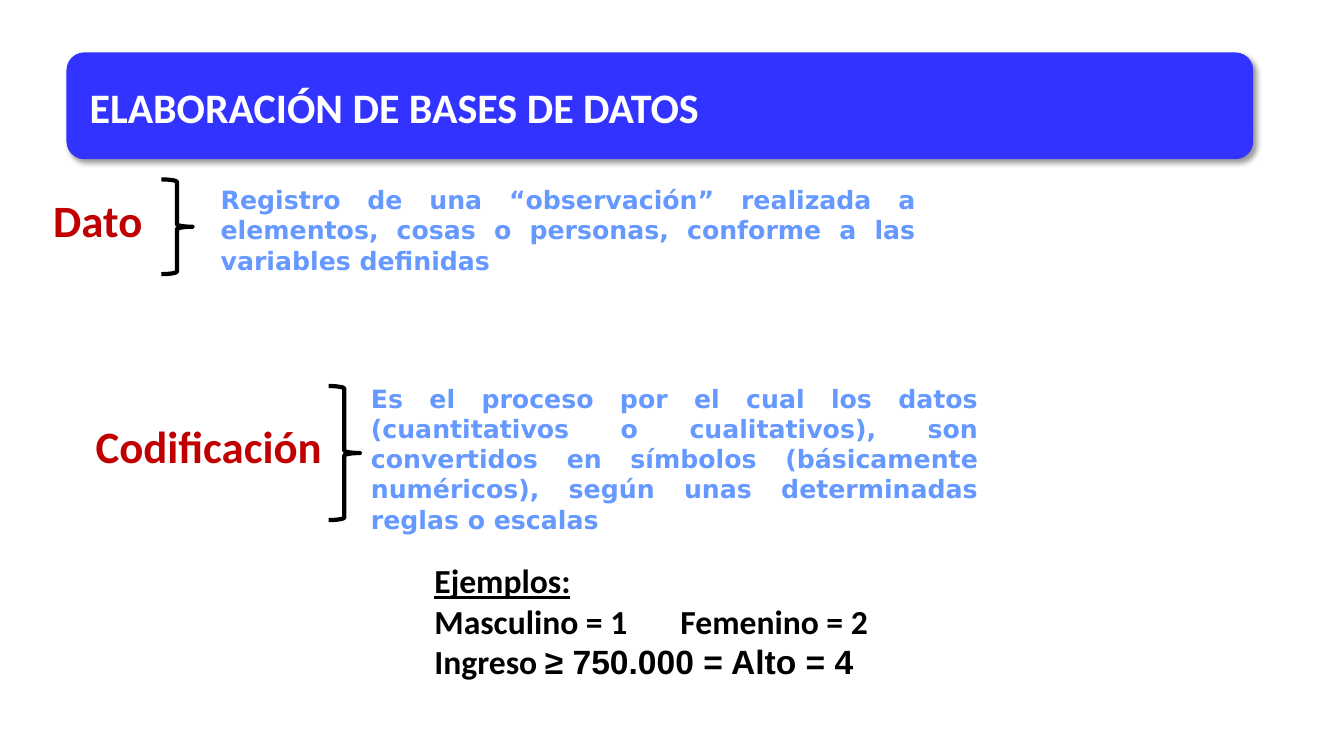
"""Builds a slide that defines data and coding for databases."""
from lxml.etree import SubElement
from pptx import Presentation
from pptx.dml.color import RGBColor
from pptx.enum.shapes import MSO_SHAPE as Shape
from pptx.enum.text import MSO_AUTO_SIZE as AutoSize, PP_ALIGN as Align
from pptx.oxml.ns import qn
from pptx.util import Inches, Pt

COLORS = {
    "banner": "3333FF",
    "title": "FFFFFF",
    "term": "C00000",
    "definition": "6699FF",
    "ink": "000000",
}


def color(name):
    """Return the named colour."""
    return RGBColor.from_string(COLORS[name])


def place(bounds):
    """Turn left, top, width and height into lengths."""
    return [Inches(value) for value in bounds]


def add_span(para, text, size=24, font="Calibri", ink="ink", underline=False):
    """Add bold formatted text to a paragraph."""
    span = para.add_run()
    span.text = text
    span.font.size = Pt(size)
    span.font.name = font
    span.font.bold = True
    span.font.underline = underline
    span.font.color.rgb = color(ink)


def add_text(page, bounds, text, align=Align.LEFT, **style):
    """Add a wrapping text box and return its frame."""
    frame = page.shapes.add_textbox(*place(bounds)).text_frame
    frame.word_wrap = True
    frame.auto_size = AutoSize.SHAPE_TO_FIT_TEXT
    para = frame.paragraphs[0]
    para.alignment = align
    add_span(para, text, **style)
    return frame


def add_banner(page, bounds):
    """Add the rounded title band with its soft shadow."""
    banner = page.shapes.add_shape(Shape.ROUNDED_RECTANGLE, *place(bounds))
    banner.fill.solid()
    banner.fill.fore_color.rgb = color("banner")
    banner.line.fill.background()
    banner.shadow.inherit = False
    effects = banner.element.spPr.find(qn("a:effectLst"))
    shadow = SubElement(effects, qn("a:outerShdw"), blurRad=str(Pt(4)),
                        dist=str(Pt(3)), dir="2700000", algn="tl", rotWithShape="0")
    tint = SubElement(shadow, qn("a:srgbClr"), val=COLORS["ink"])
    SubElement(tint, qn("a:alpha"), val="40000")


def add_brace(page, bounds):
    """Add an unfilled right brace."""
    brace = page.shapes.add_shape(Shape.RIGHT_BRACE, *place(bounds))
    brace.fill.background()
    brace.line.color.rgb = color("ink")
    brace.line.width = Pt(3)
    brace.shadow.inherit = False


def add_definition(page, term, term_at, brace_at, meaning, meaning_at):
    """Add a term, its brace and its justified meaning."""
    add_text(page, term_at, term, size=32, ink="term")
    add_brace(page, brace_at)
    add_text(page, meaning_at, meaning, align=Align.JUSTIFY,
             size=18, font="DejaVu Sans", ink="definition")


def add_examples(page, bounds):
    """Add the coding examples."""
    frame = add_text(page, bounds, "Ejemplos:", underline=True)
    sexes = frame.add_paragraph()
    tabs = SubElement(sexes._p.get_or_add_pPr(), qn("a:tabLst"))
    SubElement(tabs, qn("a:tab"), pos=str(Inches(2.44)), algn="l")
    add_span(sexes, "Masculino = 1\tFemenino = 2")
    income = frame.add_paragraph()
    add_span(income, "Ingreso ")
    add_span(income, "≥ 750.000 = Alto = 4", font="Arial")


def main():
    """Build and save the deck."""
    deck = Presentation()
    deck.slide_width, deck.slide_height = Inches(13.33), Inches(7.5)
    page = deck.slides.add_slide(deck.slide_layouts[6])
    add_banner(page, (0.66, 0.52, 11.77, 1.06))
    add_text(page, (0.79, 0.76, 10.98, 0.61), "ELABORACIÓN DE BASES DE DATOS",
             size=30, ink="title")
    add_definition(
        page, "Dato", (0.43, 1.86, 1.33, 0.64), (1.6, 1.78, 0.31, 0.94),
        "Registro de una “observación” realizada a elementos, cosas o personas, "
        "conforme a las variables definidas", (2.09, 1.78, 7.09, 0.94))
    add_definition(
        page, "Codificación", (0.85, 4.11, 2.57, 0.64), (3.26, 3.83, 0.31, 1.33),
        "Es el proceso por el cual los datos (cuantitativos o cualitativos), son "
        "convertidos en símbolos (básicamente numéricos), según unas determinadas "
        "reglas o escalas", (3.58, 3.75, 6.22, 1.62))
    add_examples(page, (4.21, 5.51, 4.88, 1.31))
    deck.save("out.pptx")


if __name__ == "__main__":
    main()
